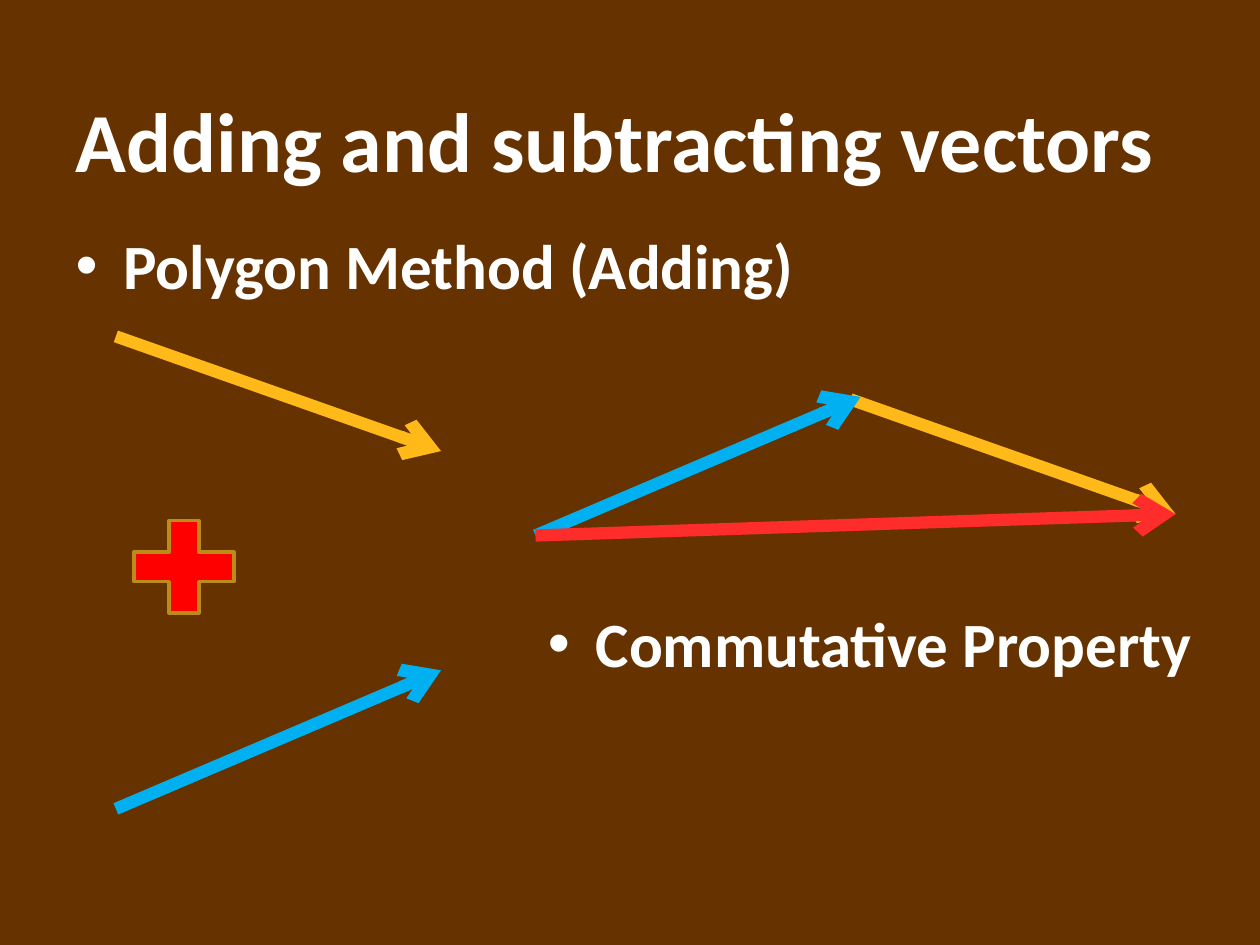
from dataclasses import dataclass

from lxml.etree import SubElement
from pptx import Presentation
from pptx.dml.color import RGBColor
from pptx.enum.shapes import MSO_CONNECTOR as Connector, MSO_SHAPE as Shape
from pptx.enum.text import MSO_ANCHOR as Anchor, MSO_AUTO_SIZE as AutoSize, PP_ALIGN as Align
from pptx.oxml.ns import qn
from pptx.util import Inches, Pt

BROWN = RGBColor(0x66, 0x33, 0x00)
WHITE = RGBColor(0xFF, 0xFF, 0xFF)
AMBER = RGBColor(0xFF, 0xBA, 0x19)
BLUE = RGBColor(0x00, 0xB0, 0xF0)
CORAL = RGBColor(0xFF, 0x2C, 0x2C)
RED = RGBColor(0xFF, 0x00, 0x00)
OCHRE = RGBColor(0xBD, 0x8B, 0x17)

FRAME_FORMAT = {"word_wrap": True, "auto_size": AutoSize.NONE}
PARAGRAPH_FORMAT = {"alignment": Align.LEFT, "space_before": Pt(0)}
FONT_FORMAT = {"name": "Calibri", "bold": True}
BULLET_INDENT = Inches(0.38)


@dataclass(frozen=True)
class Label:
    text: str
    left: float
    top: float
    width: float
    height: float
    size: int
    anchor: Anchor = Anchor.TOP
    bulleted: bool = False


@dataclass(frozen=True)
class Vector:
    start: tuple[float, float]
    end: tuple[float, float]
    color: RGBColor


HEADING = Label("Adding and subtracting vectors", 0.5, 0.3, 9, 1.25, 48, Anchor.BOTTOM)
METHOD = Label("Polygon Method (Adding)", 0.5, 1.75, 6.17, 0.75, 36, bulleted=True)
PROPERTY = Label("Commutative Property", 4.25, 4.75, 5.5, 0.75, 36, bulleted=True)

SUM_TAIL, SUM_HEAD = (4.25, 4.25), (9.33, 4.08)
VECTORS = [
    Vector((6.75, 3.17), SUM_HEAD, AMBER),
    Vector(SUM_TAIL, (6.83, 3.15), BLUE),
    Vector(SUM_TAIL, SUM_HEAD, CORAL),
    Vector((0.92, 6.42), (3.5, 5.32), BLUE),
    Vector((0.92, 2.67), (3.5, 3.58), AMBER),
]


def apply_format(target, values: dict) -> None:
    for attribute, value in values.items():
        setattr(target, attribute, value)


def add_bullet(paragraph) -> None:
    properties = paragraph._p.get_or_add_pPr()
    properties.set("marL", str(BULLET_INDENT))
    properties.set("indent", str(-BULLET_INDENT))
    color = SubElement(properties, qn("a:buClr"))
    SubElement(color, qn("a:srgbClr"), val=str(WHITE))
    SubElement(properties, qn("a:buFont"), typeface="Arial")
    SubElement(properties, qn("a:buChar"), char="•")


def write_label(holder, label: Label) -> None:
    apply_format(holder, {
        side: Inches(getattr(label, side)) for side in ("left", "top", "width", "height")
    })
    frame = holder.text_frame
    frame.text = label.text
    apply_format(frame, FRAME_FORMAT | {"vertical_anchor": label.anchor})
    paragraph = frame.paragraphs[0]
    if label.bulleted:
        add_bullet(paragraph)
    apply_format(paragraph, PARAGRAPH_FORMAT)
    font = paragraph.runs[0].font
    apply_format(font, FONT_FORMAT | {"size": Pt(label.size)})
    font.color.rgb = WHITE


def draw_vector(slide, vector: Vector) -> None:
    ends = [Inches(value) for value in vector.start + vector.end]
    arrow = slide.shapes.add_connector(Connector.STRAIGHT, *ends)
    arrow.line.color.rgb = vector.color
    arrow.line.width = Pt(7)
    SubElement(arrow.line._get_or_add_ln(), qn("a:tailEnd"), type="arrow")
    SubElement(arrow._element.spPr, qn("a:effectLst"))


def draw_plus(slide) -> None:
    plus = slide.shapes.add_shape(
        Shape.MATH_PLUS, Inches(0.92), Inches(4), Inches(1.08), Inches(1)
    )
    plus.shadow.inherit = False
    plus.fill.solid()
    plus.fill.fore_color.rgb = RED
    plus.line.color.rgb = OCHRE
    plus.line.width = Pt(2)


def main() -> None:
    deck = Presentation()
    apply_format(deck, {"slide_width": Inches(10), "slide_height": Inches(7.5)})
    slide = deck.slides.add_slide(deck.slide_layouts[1])
    slide.background.fill.solid()
    slide.background.fill.fore_color.rgb = BROWN

    write_label(slide.shapes.title, HEADING)
    write_label(slide.placeholders[1], METHOD)
    write_label(slide.shapes.add_textbox(0, 0, 0, 0), PROPERTY)
    for vector in VECTORS:
        draw_vector(slide, vector)
    draw_plus(slide)
    deck.save("out.pptx")


if __name__ == "__main__":
    main()
